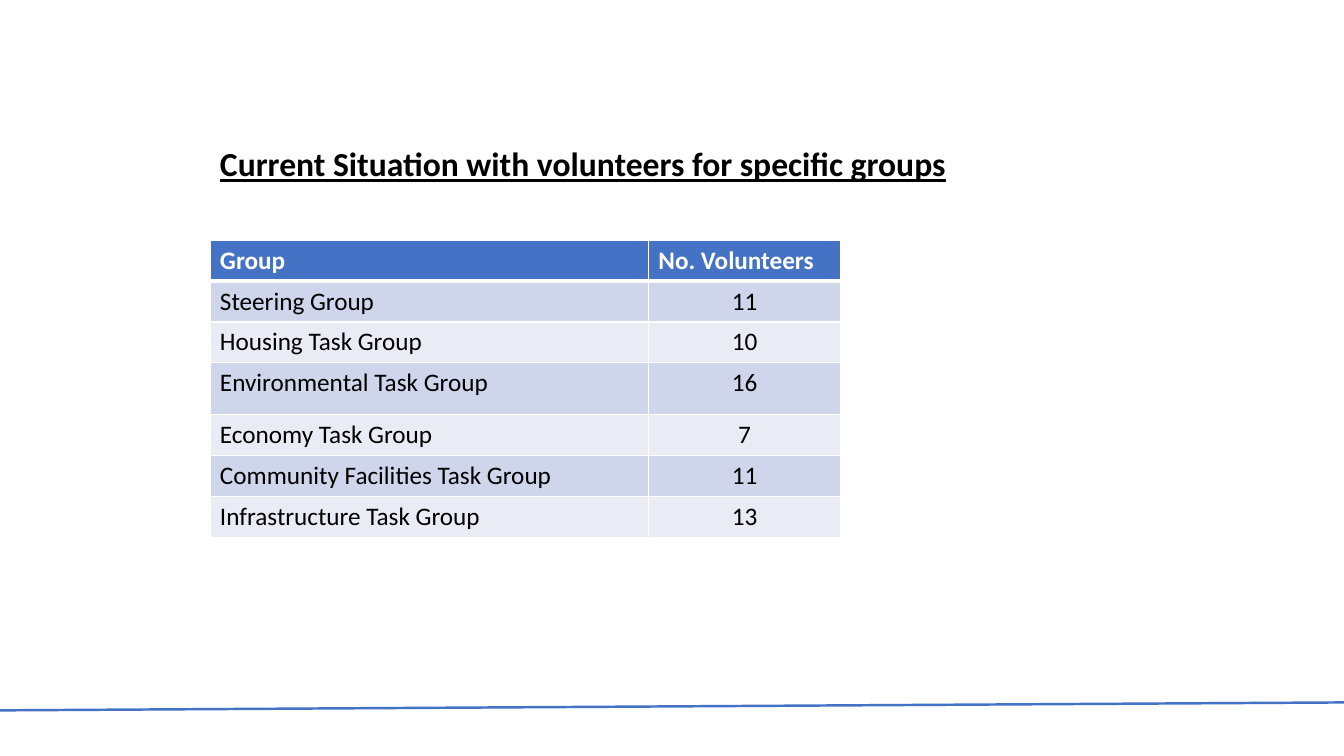
import pptx
import pptx.util
import pptx.dml.color
import pptx.enum.shapes
import pptx.enum.text
import pptx.oxml.ns
from lxml import etree

Cm = pptx.util.Cm
Pt = pptx.util.Pt
FONT = "Calibri"
COLORS = {
    "accent": "4472C4",
    "band_dark": "CFD5EA",
    "band_light": "E9EBF5",
    "white": "FFFFFF",
    "black": "000000",
}
VOLUNTEERS = [
    ("Group", "No. Volunteers"),
    ("Steering Group", "11"),
    ("Housing Task Group", "10"),
    ("Environmental Task Group", "16"),
    ("Economy Task Group", "7"),
    ("Community Facilities Task Group", "11"),
    ("Infrastructure Task Group", "13"),
]
TALL_ROW = 3


def rgb(name):
    return pptx.dml.color.RGBColor.from_string(COLORS[name])


def format_runs(paragraph, size, color, bold=False, underline=False):
    for run in paragraph.runs:
        run.font.name = FONT
        run.font.size = Pt(size)
        run.font.bold = bold
        run.font.underline = underline
        run.font.color.rgb = rgb(color)


def add_borders(cell, bottom_width):
    properties = cell._tc.get_or_add_tcPr()
    widths = {"lnL": 1, "lnR": 1, "lnT": 1, "lnB": bottom_width}
    for side, width in widths.items():
        line = etree.SubElement(properties, pptx.oxml.ns.qn(f"a:{side}"), w=str(Pt(width)))
        fill = etree.SubElement(line, pptx.oxml.ns.qn("a:solidFill"))
        etree.SubElement(fill, pptx.oxml.ns.qn("a:srgbClr"), val=COLORS["white"])


def add_title(slide, left, top, width, height):
    title = slide.shapes.title
    title.left, title.top, title.width, title.height = left, top, width, height
    text_frame = title.text_frame
    text_frame.text = "Current Situation with volunteers for specific groups"
    text_frame.word_wrap = False
    text_frame.auto_size = pptx.enum.text.MSO_AUTO_SIZE.SHAPE_TO_FIT_TEXT
    text_frame.vertical_anchor = pptx.enum.text.MSO_ANCHOR.TOP
    paragraph = text_frame.paragraphs[0]
    paragraph.alignment = pptx.enum.text.PP_ALIGN.LEFT
    format_runs(paragraph, 24, "black", bold=True, underline=True)


def add_volunteer_table(slide, left, top, width, height):
    table = slide.shapes.add_table(len(VOLUNTEERS), 2, left, top, width, height).table
    group_width = Cm(11.05)
    table.columns[0].width = group_width
    table.columns[1].width = width - group_width

    # One row is taller, the others share the remaining height
    tall_height = Cm(1.31)
    row_height = (height - tall_height) // (len(VOLUNTEERS) - 1)
    for row_index, values in enumerate(VOLUNTEERS):
        table.rows[row_index].height = tall_height if row_index == TALL_ROW else row_height
        header = row_index == 0
        band = "band_dark" if row_index % 2 else "band_light"
        for column_index, value in enumerate(values):
            cell = table.cell(row_index, column_index)
            add_borders(cell, 3 if header else 1)
            cell.fill.solid()
            cell.fill.fore_color.rgb = rgb("accent" if header else band)
            cell.text_frame.text = value
            paragraph = cell.text_frame.paragraphs[0]
            if column_index == 1 and not header:
                paragraph.alignment = pptx.enum.text.PP_ALIGN.CENTER
            format_runs(paragraph, 18, "white" if header else "black", bold=header)


def add_footer_line(slide, left, top, width, height):
    line = slide.shapes.add_connector(
        pptx.enum.shapes.MSO_CONNECTOR.STRAIGHT, left, top + height, left + width, top)
    line.line.color.rgb = rgb("accent")
    line.line.width = Pt(1.75)
    etree.SubElement(line._element.spPr, pptx.oxml.ns.qn("a:effectLst"))


def main():
    presentation = pptx.Presentation()
    presentation.slide_width = Cm(33.87)
    presentation.slide_height = Cm(19.05)
    slide = presentation.slides.add_slide(presentation.slide_layouts[5])

    content_left = Cm(5.29)
    add_footer_line(slide, 0, Cm(17.7), presentation.slide_width, Cm(0.2))
    add_volunteer_table(slide, content_left, Cm(6.05), Cm(15.9), Cm(7.5))
    add_title(slide, content_left, Cm(3.48), Cm(19), Cm(1.28))
    presentation.save("out.pptx")


if __name__ == "__main__":
    main()
